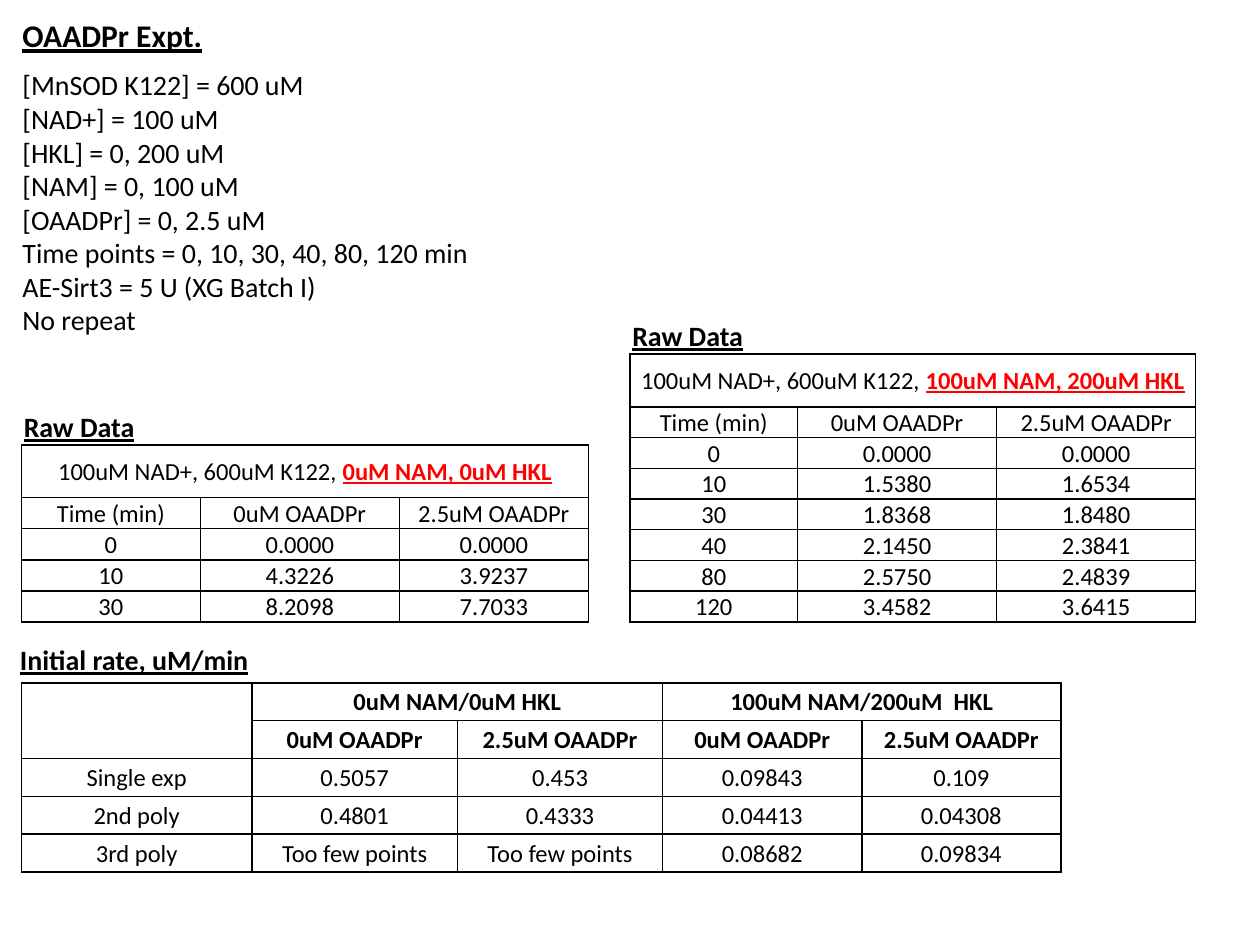
import pptx
import pptx.util
import pptx.dml.color
import pptx.enum.text
import pptx.oxml
import pptx.oxml.ns

Inches = pptx.util.Inches
Pt = pptx.util.Pt
PP_ALIGN = pptx.enum.text.PP_ALIGN
BLACK, RED = "000000", "FF0000"


def rgb(value):
    """Return the colour for a hex string."""
    return pptx.dml.color.RGBColor.from_string(value)


def style_font(font, size, color=BLACK, bold=False, underline=False):
    """Apply the slide's typeface and the given look to a font."""
    font.name = "Calibri"
    font.size = Pt(size)
    font.color.rgb = rgb(color)
    font.bold = bold
    font.underline = underline


def add_text(s, box, lines, size, heading=False, align=PP_ALIGN.LEFT):
    """Place lines of text in a box that fits its text."""
    tf = s.shapes.add_textbox(*map(Inches, box)).text_frame
    tf.word_wrap = False
    tf.auto_size = pptx.enum.text.MSO_AUTO_SIZE.SHAPE_TO_FIT_TEXT
    for i, line in enumerate(lines):
        p = tf.paragraphs[0] if i == 0 else tf.add_paragraph()
        p.alignment = align
        style_font(p.font, size, bold=heading, underline=heading)
        p.add_run().text = line


def add_borders(cell, color=BLACK):
    """Draw a one-point line on every side of a cell."""
    tc_pr = cell._tc.get_or_add_tcPr()
    for i, side in enumerate(("lnL", "lnR", "lnT", "lnB")):
        line = pptx.oxml.parse_xml(
            f'<a:{side} {pptx.oxml.ns.nsdecls("a")} w="{Pt(1)}"><a:solidFill>'
            f'<a:srgbClr val="{color}"/></a:solidFill></a:{side}>')
        tc_pr.insert(i, line)


def add_grid(s, left, top, widths, heights, rows, bold_rows=0):
    """Place a plain bordered table filled with centred text and return it."""
    table = s.shapes.add_table(
        len(heights), len(widths), Inches(left), Inches(top),
        Inches(sum(widths)), Inches(sum(heights))).table
    table.first_row = table.horz_banding = False
    for column, width in zip(table.columns, widths):
        column.width = Inches(width)
    for row, height in zip(table.rows, heights):
        row.height = Inches(height)
    for i, values in enumerate(rows):
        for j, value in enumerate(values):
            cell = table.cell(i, j)
            cell.margin_left = cell.margin_right = cell.margin_top = Inches(0.01)
            cell.margin_bottom = 0
            cell.vertical_anchor = pptx.enum.text.MSO_ANCHOR.MIDDLE
            cell.fill.background()
            add_borders(cell)
            p = cell.text_frame.paragraphs[0]
            p.alignment = PP_ALIGN.CENTER
            style_font(p.font, 14, bold=i < bold_rows)
            if value:
                p.add_run().text = value
    return table


def add_raw_data(s, left, top, widths, condition, readings):
    """Place a raw data heading and its time course table."""
    rows = [("100uM NAD+, 600uM K122, ", "", ""),
            ("Time (min)", "0uM OAADPr", "2.5uM OAADPr"), *readings]
    heights = [0.42] + [0.24] * (len(rows) - 1)
    table = add_grid(s, left, top, widths, heights, rows)
    table.cell(0, 0).merge(table.cell(0, 2))
    r = table.cell(0, 0).text_frame.paragraphs[0].add_run()
    r.text = condition
    style_font(r.font, 14, RED, bold=True, underline=True)
    add_text(s, (left - 0.08, top - 0.33, 1.09, 0.37), ["Raw Data"], 16, heading=True)


def add_initial_rates(s, left, top):
    """Place the initial rate heading and its table of fits."""
    rows = [
        ("", "0uM NAM/0uM HKL", "", "100uM NAM/200uM  HKL", ""),
        ("",) + ("0uM OAADPr", "2.5uM OAADPr") * 2,
        ("Single exp", "0.5057", "0.453", "0.09843", "0.109"),
        ("2nd poly", "0.4801", "0.4333", "0.04413", "0.04308"),
        ("3rd poly", "Too few points", "Too few points", "0.08682", "0.09834"),
    ]
    widths = [1.83, 1.63, 1.63, 1.58, 1.58]
    table = add_grid(s, left, top, widths, [0.3] * len(rows), rows, bold_rows=2)
    for start, end in (((0, 0), (1, 0)), ((0, 1), (0, 2)), ((0, 3), (0, 4))):
        table.cell(*start).merge(table.cell(*end))
    add_text(s, (left - 0.12, top - 0.37, 2.03, 0.37), ["Initial rate, uM/min"], 16,
             heading=True, align=PP_ALIGN.CENTER)


def add_conditions(s, left, top):
    """Place the experiment title and its list of conditions."""
    add_text(s, (left, top, 1.64, 0.4), ["OAADPr Expt."], 18, heading=True)
    add_text(s, (left, top + 0.41, 3.78, 2.26), [
        "[MnSOD K122] = 600 uM",
        "[NAD+] = 100 uM",
        "[HKL] = 0, 200 uM",
        "[NAM] = 0, 100 uM",
        "[OAADPr] = 0, 2.5 uM",
        "Time points = 0, 10, 30, 40, 80, 120 min",
        "AE-Sirt3 = 5 U (XG Batch I)",
        "No repeat",
    ], 16)


def main():
    """Build the slide and save it."""
    prs = pptx.Presentation()
    prs.slide_width, prs.slide_height = Inches(10), Inches(7.5)
    s = prs.slides.add_slide(prs.slide_layouts[6])
    add_raw_data(s, 0.17, 3.53, [1.42, 1.58, 1.5], "0uM NAM, 0uM HKL", [
        ("0", "0.0000", "0.0000"),
        ("10", "4.3226", "3.9237"),
        ("30", "8.2098", "7.7033"),
    ])
    add_raw_data(s, 5, 2.81, [1.33, 1.58, 1.58], "100uM NAM, 200uM HKL", [
        ("0", "0.0000", "0.0000"),
        ("10", "1.5380", "1.6534"),
        ("30", "1.8368", "1.8480"),
        ("40", "2.1450", "2.3841"),
        ("80", "2.5750", "2.4839"),
        ("120", "3.4582", "3.6415"),
    ])
    add_initial_rates(s, 0.17, 5.42)
    add_conditions(s, 0.08, 0.08)
    prs.save("out.pptx")


if __name__ == "__main__":
    main()
